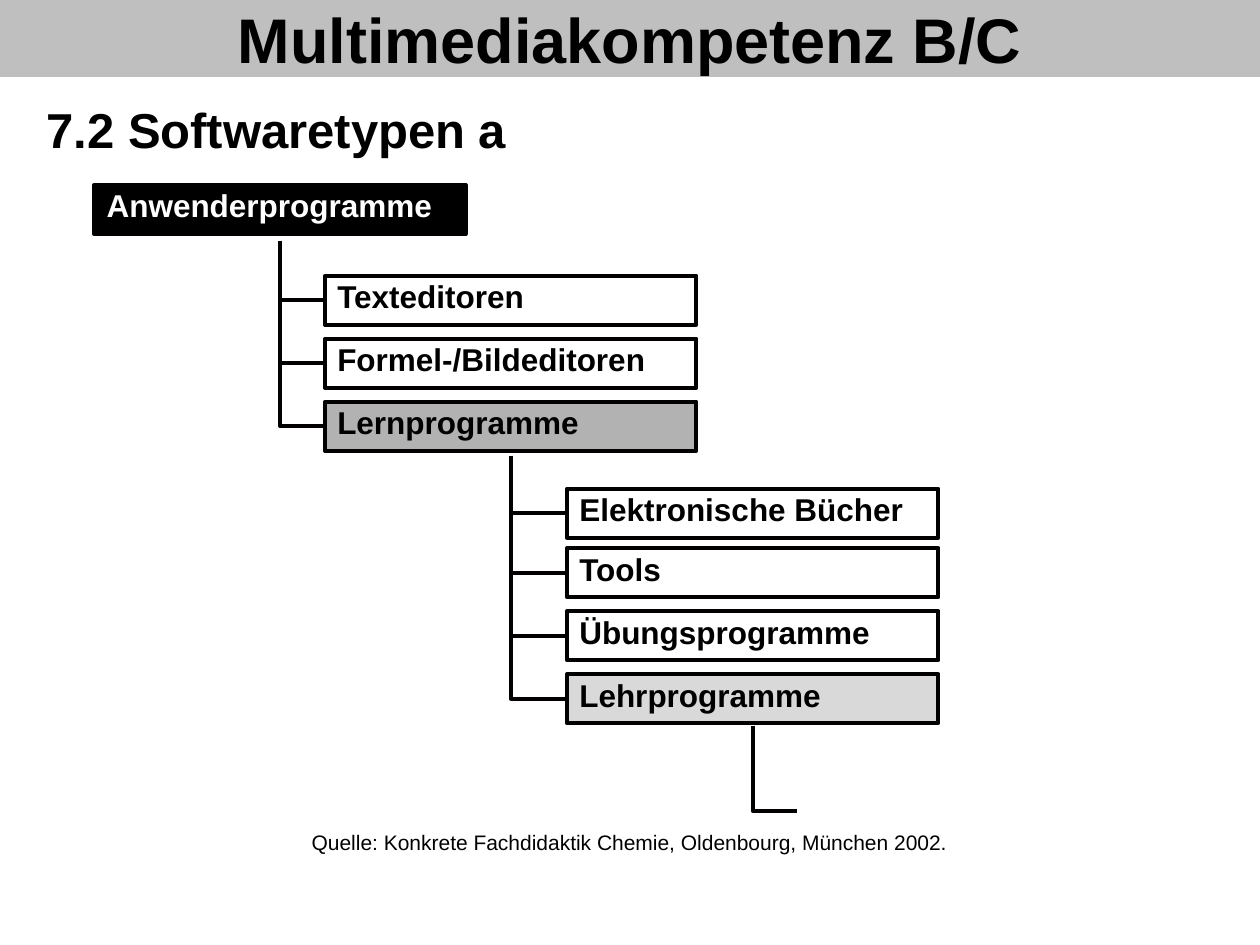
from pptx import Presentation
from pptx.dml.color import RGBColor
from pptx.enum import shapes, text
from pptx.oxml import ns
from pptx.util import Cm, Pt

COLORS = {
    "text": "000000",
    "inverse": "FFFFFF",
    "line": "020000",
    "band": "BFBFBF",
    "root": "000000",
    "branch": "B2B2B2",
    "leaf": "D9D9D9",
}
FONT = "Arial"
NODE_W, NODE_H = 7.49, 0.99
PITCH = 1.27


def color(name):
    return RGBColor.from_string(COLORS[name])


def write(frame, wording, size, bold=False, ink="text", align=text.PP_ALIGN.LEFT):
    frame.word_wrap = True
    paragraph = frame.paragraphs[0]
    paragraph.text = wording
    paragraph.alignment = align
    paragraph.space_before = Pt(0)
    paragraph.font.name = FONT
    paragraph.font.size = Pt(size)
    paragraph.font.bold = bold
    paragraph.font.color.rgb = color(ink)


def title_band(slide, left, top, width, height):
    title = slide.shapes.title
    title.left, title.top = Cm(left), Cm(top)
    title.width, title.height = Cm(width), Cm(height)
    title.fill.solid()
    title.fill.fore_color.rgb = color("band")
    title.text_frame.auto_size = text.MSO_AUTO_SIZE.NONE
    title.text_frame.vertical_anchor = text.MSO_ANCHOR.MIDDLE
    write(title.text_frame, "Multimediakompetenz B/C", 36, True,
          align=text.PP_ALIGN.CENTER)


def text_line(slide, left, top, width, height, wording, size, **style):
    box = slide.shapes.add_textbox(Cm(left), Cm(top), Cm(width), Cm(height))
    write(box.text_frame, wording, size, **style)


def node(slide, left, top, wording, fill=None, ink="text"):
    box = slide.shapes.add_shape(shapes.MSO_SHAPE.RECTANGLE, Cm(left), Cm(top),
                                 Cm(NODE_W), Cm(NODE_H))
    box.shadow.inherit = False
    if fill:
        box.fill.solid()
        box.fill.fore_color.rgb = color(fill)
    else:
        box.fill.background()
    box.line.color.rgb = color("line")
    box.line.width = Pt(2.25)
    frame = box.text_frame
    frame.margin_left = frame.margin_right = Cm(0.25)
    frame.margin_top = frame.margin_bottom = Cm(0.03)
    frame.vertical_anchor = text.MSO_ANCHOR.TOP
    write(frame, wording, 18, True, ink)


def elbow(slide, left, top, width, height):
    """Line that runs down the left side of its box, then along the bottom."""
    # The preset runs right, then down: mirror it and turn it by 270 degrees
    mid_x, mid_y = left + width / 2, top + height / 2
    line = slide.shapes.add_connector(
        shapes.MSO_CONNECTOR.ELBOW,
        Cm(mid_x + height / 2), Cm(mid_y - width / 2),
        Cm(mid_x - height / 2), Cm(mid_y + width / 2))
    line.line.color.rgb = color("line")
    line.line.width = Pt(2.25)
    properties = line._element.spPr
    properties.find(ns.qn("a:xfrm")).set("rot", "16200000")
    properties.find(ns.qn("a:prstGeom")).set("prst", "bentConnector2")
    properties.append(properties.makeelement(ns.qn("a:effectLst"), {}))


def branch(slide, left, top, stem_x, stem_top, children, first_pitch=PITCH):
    """Column of nodes, each joined to the stem of its parent."""
    for index, (wording, fill) in enumerate(children):
        node_top = top + (first_pitch + (index - 1) * PITCH if index else 0)
        node(slide, left, node_top, wording, fill)
        elbow(slide, stem_x, stem_top, left - stem_x,
              node_top + NODE_H / 2 - stem_top)


def software_tree(slide, left, top):
    node(slide, left, top, "Anwenderprogramme", "root", "inverse")
    # Kinds of application programs
    branch(slide, left + 4.65, top + 1.83, left + NODE_W / 2, top + 1.12, [
        ("Texteditoren", None),
        ("Formel-/Bildeditoren", None),
        ("Lernprogramme", "branch"),
    ])
    # Kinds of learning programs
    branch(slide, left + 9.53, top + 6.12, left + 8.4, top + 5.46, [
        ("Elektronische Bücher", None),
        ("Tools", None),
        ("Übungsprogramme", None),
        ("Lehrprogramme", "leaf"),
    ], first_pitch=1.2)
    # Open branch below the last node
    elbow(slide, left + 9.53 + NODE_W / 2, top + 10.9, 0.9, 1.72)


def main():
    deck = Presentation()
    deck.slide_width, deck.slide_height = Cm(25.4), Cm(19.05)
    slide = deck.slides.add_slide(deck.slide_layouts[5])
    title_band(slide, 0, 0, 25.4, 1.55)
    # Section heading
    text_line(slide, 0.69, 1.88, 24, 1.37, "7.2 Softwaretypen a", 28, bold=True)
    software_tree(slide, 1.9, 3.73)
    # Source note
    text_line(slide, 1.9, 16.59, 21.59, 0.76,
              "Quelle: Konkrete Fachdidaktik Chemie, Oldenbourg, München 2002.",
              12, align=text.PP_ALIGN.CENTER)
    deck.save("out.pptx")


if __name__ == "__main__":
    main()
